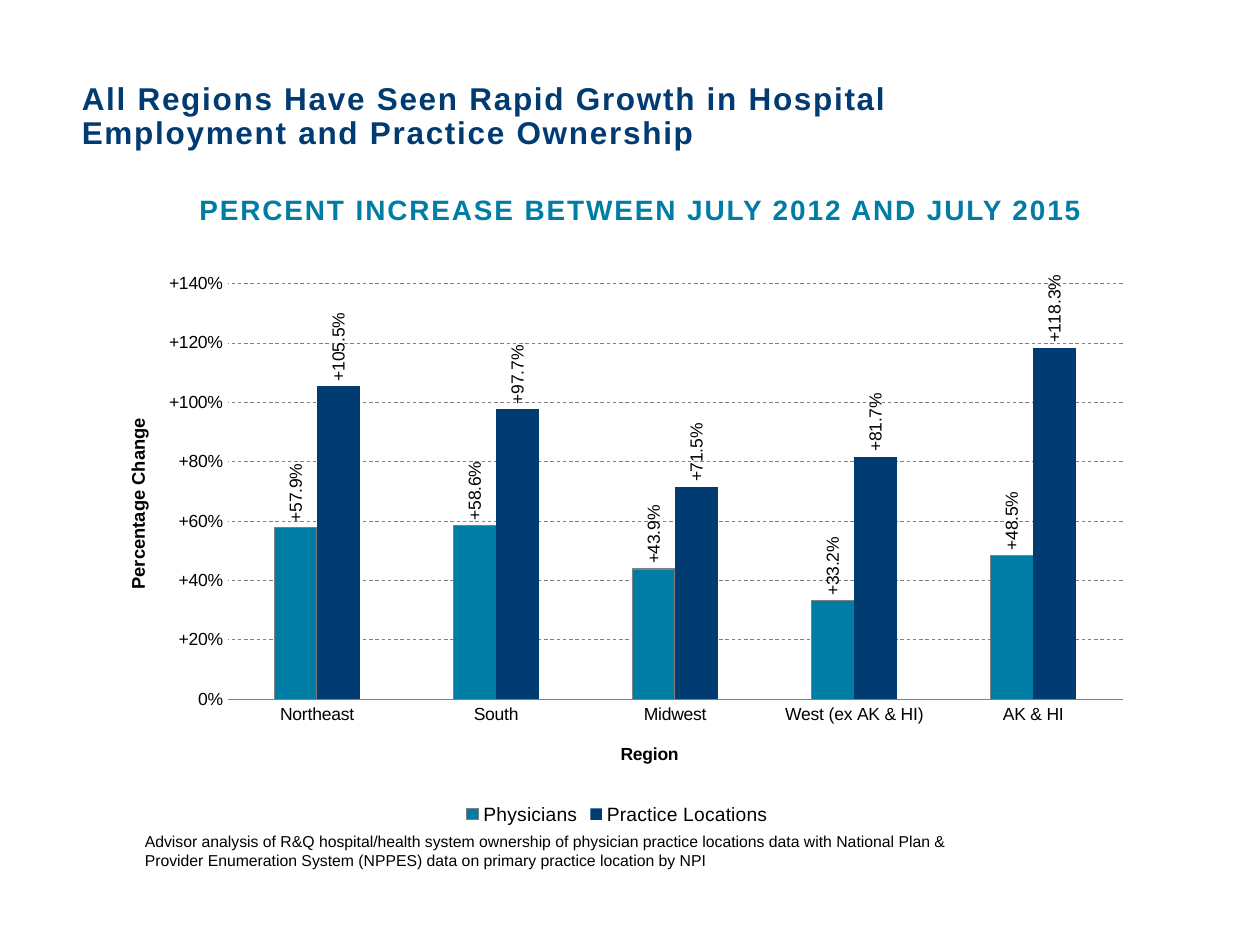
from lxml import etree
from pptx import Presentation, util as u
from pptx.chart.data import CategoryChartData
from pptx.dml.color import RGBColor
from pptx.enum import chart as ch, dml, text
from pptx.oxml.ns import qn

NAVY = RGBColor(0x00, 0x3B, 0x71)
TEAL = RGBColor(0x00, 0x7D, 0xA4)
GREY = RGBColor(0x80, 0x80, 0x80)
BLACK = RGBColor(0, 0, 0)
FONT = "Arial"

prs = Presentation()
prs.slide_width, prs.slide_height = u.Cm(25.4), u.Cm(19.05)
slide = prs.slides.add_slide(prs.slide_layouts[6])


def add_text(words, left, top, width, height, size, color, bold=False, spacing=0):
    """Add a wrapped text box; spacing is in hundredths of a point."""
    box = slide.shapes.add_textbox(u.Cm(left), u.Cm(top), u.Cm(width), u.Cm(height))
    frame = box.text_frame
    frame.word_wrap = True
    frame.text = words
    run = frame.paragraphs[0].runs[0]
    run.font.name, run.font.size, run.font.bold = FONT, u.Pt(size), bold
    run.font.color.rgb = color
    if spacing:
        run.font._element.set("spc", str(spacing))
    return frame


def set_layout(parent, index, **fractions):
    """Place a chart part by fractions of the chart area."""
    for old in parent.findall(qn("c:layout")):
        parent.remove(old)
    layout = etree.Element(qn("c:layout"))
    manual = etree.SubElement(layout, qn("c:manualLayout"))
    if "w" in fractions:
        etree.SubElement(manual, qn("c:layoutTarget")).set("val", "inner")
    for mode in ("xMode", "yMode"):
        etree.SubElement(manual, qn(f"c:{mode}")).set("val", "edge")
    for key, value in fractions.items():
        etree.SubElement(manual, qn(f"c:{key}")).set("val", str(value))
    parent.insert(index, layout)


# Headline
headline = add_text("All Regions Have Seen Rapid Growth in Hospital Employment and Practice Ownership",
                    1.4, 1.5, 17.7, 1.68, 18, NAVY, True, 100)
headline.vertical_anchor = text.MSO_ANCHOR.BOTTOM
headline.paragraphs[0].line_spacing = 0.9

# Source line
add_text("Advisor analysis of R&Q hospital/health system ownership of physician practice "
         "locations data with National Plan & Provider Enumeration System (NPPES) data on "
         "primary practice location by NPI", 2.67, 16.64, 17.7, 1.09, 9, BLACK)

# Growth by region
growth = CategoryChartData()
growth.categories = ["Northeast", "South", "Midwest", "West (ex AK & HI)", "AK & HI"]
growth.add_series("Physicians", [0.579, 0.586, 0.439, 0.332, 0.485])
growth.add_series("Practice Locations", [1.055, 0.977, 0.715, 0.817, 1.183])
chart = slide.shapes.add_chart(ch.XL_CHART_TYPE.COLUMN_CLUSTERED, u.Cm(1.83), u.Cm(5.26),
                               u.Cm(21.23), u.Cm(11.48), growth).chart
chart.has_title = False
chart.font.name, chart.font.size = FONT, u.Pt(10)
chart.font.color.rgb = BLACK
chart.has_legend = True
chart.legend.position = ch.XL_LEGEND_POSITION.BOTTOM
chart.legend.include_in_layout = False
chart.legend.font.size = u.Pt(11)
chart.legend.font.name = FONT
chart.legend.font.color.rgb = BLACK

# Columns and their upright labels
columns = chart.plots[0]
columns.gap_width, columns.overlap = 219, 0
columns.vary_by_categories = False
for series, color in zip(columns.series, (TEAL, NAVY)):
    series.format.fill.solid()
    series.format.fill.fore_color.rgb = color
    labels = series.data_labels
    labels.show_value = True
    labels.number_format = r"\+0.0%;\-0.0%;0.0%"
    labels.number_format_is_linked = False
    labels.position = ch.XL_LABEL_POSITION.OUTSIDE_END
    labels.font.name, labels.font.size = FONT, u.Pt(10)
    labels.font.color.rgb = BLACK
    upright = labels._element.find(".//" + qn("a:bodyPr"))
    upright.set("rot", "-5400000")
    upright.set("vert", "horz")
physicians = columns.series[0]
physicians.format.line.color.rgb = GREY
physicians.format.line.width = u.Pt(0.75)

# Axes
regions, change = chart.category_axis, chart.value_axis
for axis, title, size, x, y in ((regions, "Region", 10, 0.5, 0.84),
                                (change, "Percentage Change", 10.5, 0.03, 0.27)):
    axis.major_tick_mark = axis.minor_tick_mark = ch.XL_TICK_MARK.NONE
    frame = axis.axis_title.text_frame
    frame.text = title
    font = frame.paragraphs[0].runs[0].font
    font.name, font.size, font.bold = FONT, u.Pt(size), True
    font.color.rgb = BLACK
    set_layout(axis.axis_title._element, 1, x=x, y=y)
change_title = change.axis_title._element.find(".//" + qn("a:bodyPr"))
change_title.set("rot", "-5400000")
change_title.set("vert", "horz")

regions.format.line.color.rgb = GREY
regions.format.line.width = u.Pt(0.75)
change.minimum_scale, change.maximum_scale, change.major_unit = 0, 1.4, 0.2
change.tick_labels.number_format = r"\+0%;\-0%;0%"
change.tick_labels.number_format_is_linked = False
change.format.line.fill.background()
grid = change.major_gridlines.format.line
grid.color.rgb = GREY
grid.width = u.Pt(0.5)
grid.dash_style = dml.MSO_LINE.DASH
set_layout(chart._chartSpace.find(".//" + qn("c:plotArea")), 0, x=0.13, y=0.04, w=0.85, h=0.73)

# Chart heading
heading = add_text("PERCENT INCREASE BETWEEN JULY 2012 AND JULY 2015",
                   1.4, 3.76, 23.04, 1.17, 16, TEAL, True, 110)
heading.paragraphs[0].alignment = text.PP_ALIGN.CENTER

prs.save("out.pptx")
